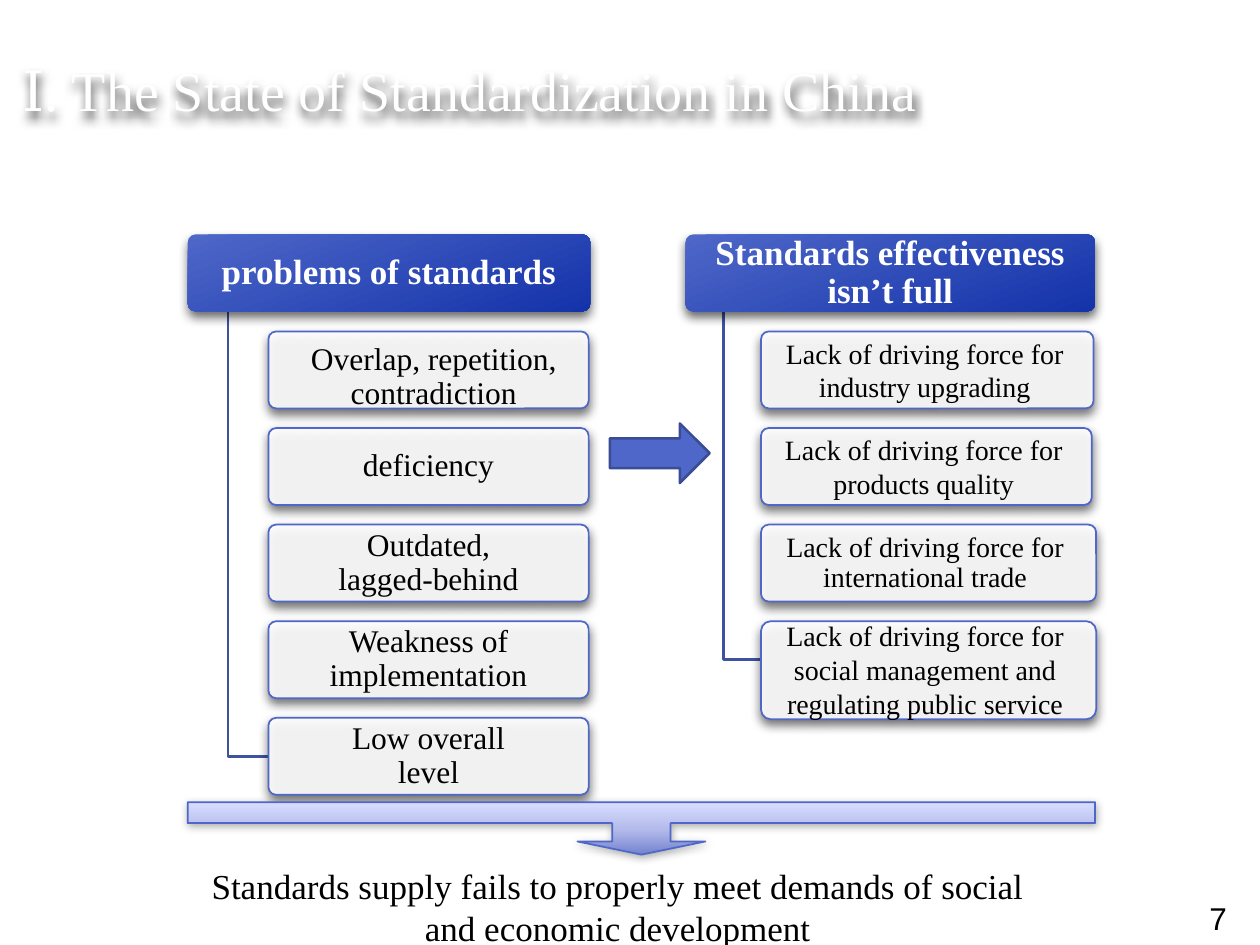
"""Build a slide on the state of standardization: two problem lists leading to one conclusion."""
from lxml.etree import SubElement
from pptx import Presentation
from pptx.dml.color import RGBColor
from pptx.enum.shapes import MSO_SHAPE
from pptx.enum.text import MSO_ANCHOR, PP_ALIGN
from pptx.oxml.ns import qn
from pptx.util import Pt

COLORS = {
    "white": "FFFFFF", "black": "000000", "blue": "4E67C8", "deep": "1433AA",
    "elbow": "3E52A0", "arrow_edge": "3A4C94",
    "callout_dark": "7382CE", "callout_mid": "B4BBEB", "callout_light": "D9DDFF",
}
SERIF = "Times New Roman"
TITLE = "Ⅰ. The State of Standardization in China"
CONCLUSION = [
    ("Standards supply fails to properly meet demands of social", PP_ALIGN.LEFT),
    ("and economic development", PP_ALIGN.CENTER),
]
COLUMNS = [
    {
        "header": "problems of standards", "header_box": (107.3, 230),
        "elbow_x": 130.3, "card_x": 153.4, "size": 18,
        "cards": [
            {"text": "Overlap, repetition, contradiction", "width": 183, "insets": (9, 10, 3, 2), "spacing": 0.9},
            {"text": "deficiency", "width": 183, "insets": (28, 2, 28, 2), "spacing": 0.9},
            {"text": "Outdated, lagged-behind", "width": 183, "insets": (28, 2, 28, 2), "spacing": 0.9},
            {"text": "Weakness of implementation", "width": 183, "insets": (20, 2, 20, 2), "spacing": 0.9},
            {"text": "Low overall level", "width": 183, "insets": (28, 2, 28, 2), "spacing": 0.9},
        ],
    },
    {
        "header": "Standards effectiveness isn’t full", "header_box": (391.7, 234),
        "elbow_x": 413.3, "card_x": 434.9, "size": 16,
        "cards": [
            {"text": "Lack of driving force for industry upgrading", "width": 190, "insets": (2, 2, 5, 2)},
            {"text": "Lack of driving force for products quality", "width": 189, "insets": (2, 2, 5, 2)},
            {"text": "Lack of driving force for international trade", "width": 191.5,
             "insets": (2, 2, 6, 2), "spacing": 0.9},
            {"text": "Lack of driving force for social management and regulating public service",
             "width": 191.5, "insets": (2, 1, 6, 2), "height": 56},
        ],
    },
]
HEADER_TOP, BOX_HEIGHT, FIRST_CARD_TOP, CARD_STEP = 134, 44, 189.4, 55.2


def rgb(name):
    return RGBColor.from_string(COLORS[name])


def add_shadow(shape, blur, distance, alpha):
    shape.shadow.inherit = False
    effects = shape._element.spPr.find(qn("a:effectLst"))
    shadow = SubElement(effects, qn("a:outerShdw"), blurRad=str(Pt(blur)), dist=str(Pt(distance)),
                        dir="5400000", rotWithShape="0")
    color = SubElement(shadow, qn("a:srgbClr"), val=COLORS["black"])
    SubElement(color, qn("a:alpha"), val=str(alpha * 1000))


def fill_gradient(shape, stops, angle):
    shape.fill.gradient()
    shape.fill.gradient_angle = angle
    stop_list = next(shape._element.spPr.iter(qn("a:gsLst")))
    for stop in list(stop_list):
        stop_list.remove(stop)
    for position, name in stops:
        stop = SubElement(stop_list, qn("a:gs"), pos=str(position * 1000))
        SubElement(stop, qn("a:srgbClr"), val=COLORS[name])


def add_preset(slide, kind, box, line=None, line_width=1, adjustments=()):
    shape = slide.shapes.add_shape(kind, *map(Pt, box))
    shape.shadow.inherit = False
    for index, value in enumerate(adjustments):
        shape.adjustments[index] = value
    if line:
        shape.line.color.rgb = rgb(line)
        shape.line.width = Pt(line_width)
    else:
        shape.line.fill.background()
    return shape


def format_paragraph(paragraph, size, color="black", font=SERIF, bold=False, align=PP_ALIGN.LEFT, spacing=None):
    paragraph.alignment = align
    if spacing:
        paragraph.line_spacing = spacing
    for run in paragraph.runs:
        run.font.name, run.font.size, run.font.bold = font, Pt(size), bold
        run.font.color.rgb = rgb(color)


def write_in_box(shape, text, insets, **style):
    frame = shape.text_frame
    frame.word_wrap = True
    frame.vertical_anchor = MSO_ANCHOR.MIDDLE
    frame.margin_left, frame.margin_top, frame.margin_right, frame.margin_bottom = map(Pt, insets)
    frame.text = text
    format_paragraph(frame.paragraphs[0], align=PP_ALIGN.CENTER, **style)


def add_text(slide, box, lines, wrap=True, **style):
    textbox = slide.shapes.add_textbox(*map(Pt, box))
    frame = textbox.text_frame
    frame.word_wrap = wrap
    frame.text = "\n".join(text for text, _ in lines)
    for paragraph, (_, align) in zip(frame.paragraphs, lines):
        format_paragraph(paragraph, align=align, **style)
    return textbox


def add_elbow(slide, x, top, bottom, end_x):
    builder = slide.shapes.build_freeform(Pt(x), Pt(top))
    builder.add_line_segments([(Pt(x), Pt(bottom)), (Pt(end_x), Pt(bottom))], close=False)
    elbow = builder.convert_to_shape()
    elbow.shadow.inherit = False
    elbow.fill.background()
    elbow.line.color.rgb = rgb("elbow")
    elbow.line.width = Pt(1.5)


def add_column(slide, column):
    left, width = column["header_box"]
    last_top = FIRST_CARD_TOP + CARD_STEP * (len(column["cards"]) - 1)
    add_elbow(slide, column["elbow_x"], HEADER_TOP + BOX_HEIGHT, last_top + BOX_HEIGHT / 2, column["card_x"])
    header = add_preset(slide, MSO_SHAPE.ROUNDED_RECTANGLE, (left, HEADER_TOP, width, BOX_HEIGHT),
                        adjustments=[0.1])
    fill_gradient(header, [(0, "blue"), (100, "deep")], 291)
    add_shadow(header, 6, 3, 60)
    write_in_box(header, column["header"], (4, 3, 4, 3), size=20, color="white", bold=True, spacing=0.9)
    for index, card in enumerate(column["cards"]):
        box = (column["card_x"], FIRST_CARD_TOP + CARD_STEP * index, card["width"], card.get("height", BOX_HEIGHT))
        shape = add_preset(slide, MSO_SHAPE.ROUNDED_RECTANGLE, box, "blue", adjustments=[0.1])
        shape.fill.solid()
        shape.fill.fore_color.rgb = rgb("white")
        color = next(shape._element.spPr.find(qn("a:solidFill")).iter(qn("a:srgbClr")))
        SubElement(color, qn("a:alpha"), val="90000")
        add_shadow(shape, 6, 3, 60)
        write_in_box(shape, card["text"], card["insets"], size=column["size"], spacing=card.get("spacing"))


def main():
    presentation = Presentation()
    presentation.slide_width, presentation.slide_height = Pt(720), Pt(540)
    slide = presentation.slides.add_slide(presentation.slide_layouts[6])

    title = add_text(slide, (6, 6, 708, 90), [(TITLE, PP_ALIGN.LEFT)], size=32, color="white")
    title.text_frame.vertical_anchor = MSO_ANCHOR.MIDDLE
    add_shadow(title, 6, 4, 75)

    for column in COLUMNS:
        add_column(slide, column)

    arrow = add_preset(slide, MSO_SHAPE.RIGHT_ARROW, (348.5, 242, 57, 34), "arrow_edge", 1.5)
    arrow.fill.solid()
    arrow.fill.fore_color.rgb = rgb("blue")

    callout = add_preset(slide, MSO_SHAPE.DOWN_ARROW_CALLOUT, (107.3, 458.4, 518.5, 30), "blue",
                         adjustments=[1.11, 1.22, 0.25, 0.4])
    fill_gradient(callout, [(0, "callout_dark"), (48, "callout_mid"), (100, "callout_light")], 90)
    add_shadow(callout, 5, 1, 32)

    add_text(slide, (113.8, 490.3, 486, 55.5), CONCLUSION, wrap=False, size=20)
    add_text(slide, (684, 510, 36, 30), [("7", PP_ALIGN.LEFT)], size=18, font="Arial")
    presentation.save("out.pptx")


if __name__ == "__main__":
    main()
